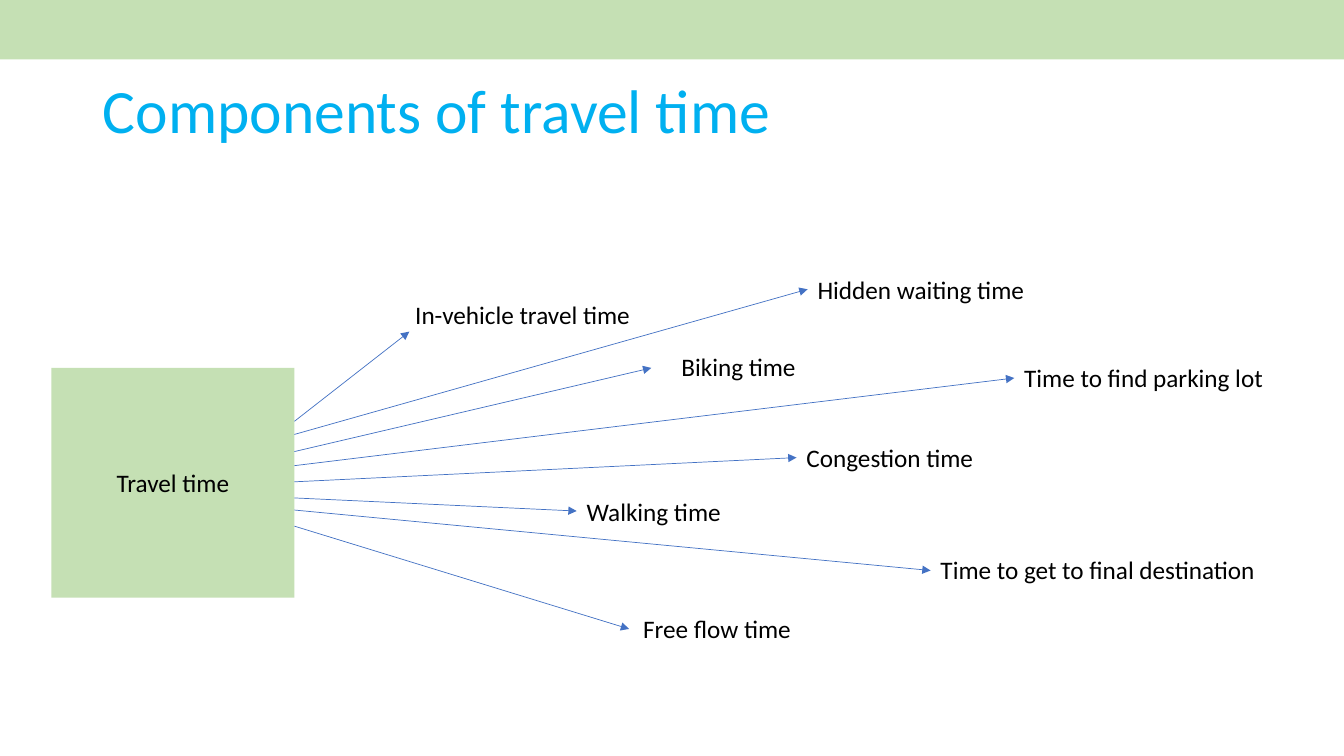
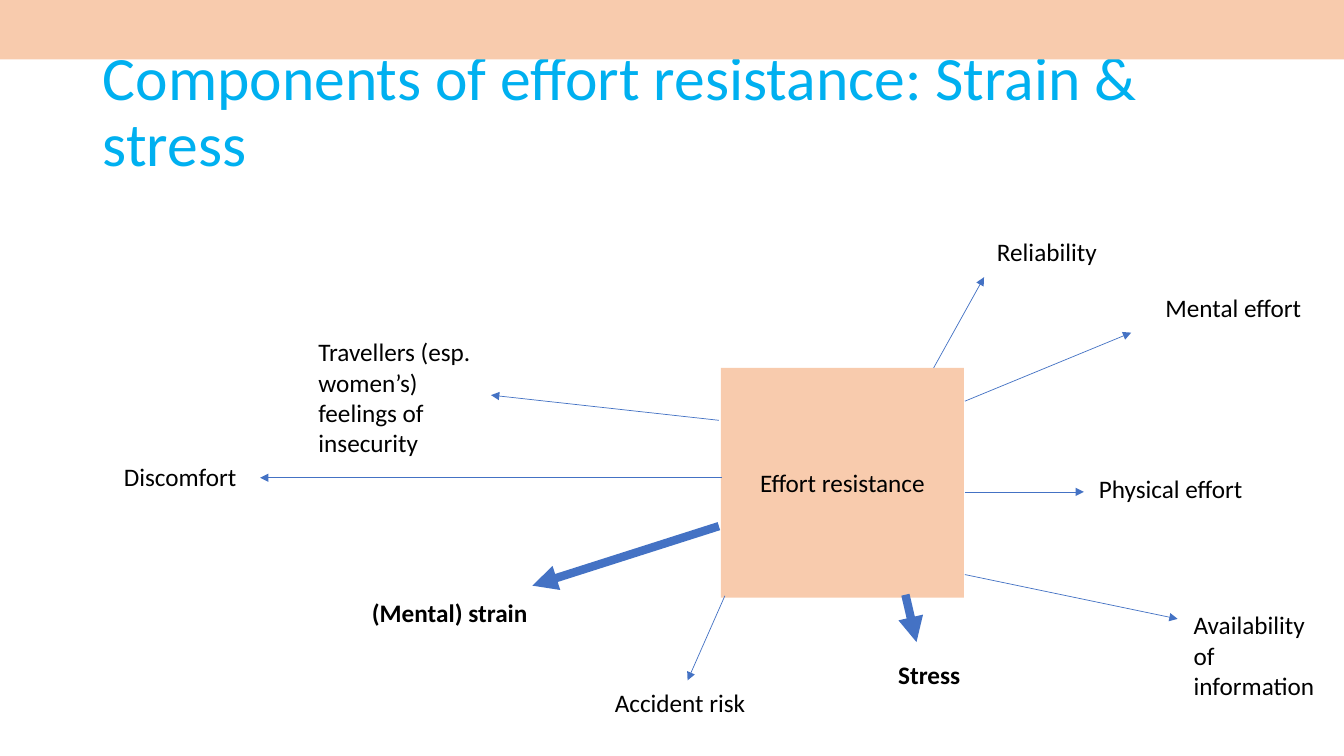
"""Build two hub-and-spoke slides on travel time and effort resistance."""
from typing import NamedTuple

from lxml import etree
from pptx import Presentation
from pptx.dml.color import RGBColor
from pptx.enum.shapes import MSO_CONNECTOR, MSO_SHAPE
from pptx.enum.text import MSO_ANCHOR, MSO_AUTO_SIZE, PP_ALIGN
from pptx.oxml.ns import qn
from pptx.util import Inches, Pt

RECTANGLE = MSO_SHAPE.RECTANGLE
STRAIGHT = MSO_CONNECTOR.STRAIGHT
MIDDLE = MSO_ANCHOR.MIDDLE
LEFT = PP_ALIGN.LEFT
CENTER = PP_ALIGN.CENTER
NO_AUTOFIT = MSO_AUTO_SIZE.NONE
FIT_SHAPE = MSO_AUTO_SIZE.SHAPE_TO_FIT_TEXT

FONT = "Calibri"
TITLE_BLUE = RGBColor(0x00, 0xB0, 0xF0)
ARROW_BLUE = RGBColor(0x44, 0x72, 0xC4)
GREEN = RGBColor(0xC5, 0xE0, 0xB4)
PEACH = RGBColor(0xF8, 0xCB, 0xAD)
BLACK = RGBColor(0x00, 0x00, 0x00)

TITLE_ONLY = 5
TITLE_BOX = (0.92, 0.4, 11.5, 1.45)
BAND_BOX = (-0.02, -0.01, 13.35, 0.6)
HUB_TOP, HUB_WIDTH, HUB_HEIGHT = 3.65, 2.41, 2.28
TIME_LEFT, EFFORT_LEFT = 0.51, 7.15
TIME_EDGE = TIME_LEFT + HUB_WIDTH
EFFORT_EDGE = 9.57
LINE_HEIGHT = 0.4


class Spoke(NamedTuple):
    """A label and the arrow that leads to it from the hub."""
    text: str
    left: float
    top: float
    width: float
    start: tuple
    end: tuple
    height: float = LINE_HEIGHT
    wrap: bool = True
    bold: bool = False


def time_spoke(text, left, top, width, start_top, end):
    """Return a one-line spoke that leaves the right edge of the time hub."""
    return Spoke(text, left, top, width, (TIME_EDGE, start_top), end, wrap=False)


TIME_SPOKES = [
    time_spoke("In-vehicle travel time", 4.02, 2.92, 2.36, 4.18, (4.06, 3.29)),
    time_spoke("Hidden waiting time", 8.01, 2.67, 2.28, 4.31, (8.01, 2.87)),
    time_spoke("Biking time", 6.66, 3.44, 1.35, 4.48, (6.46, 3.65)),
    time_spoke("Time to find parking lot", 10.06, 3.55, 2.6, 4.62, (10.06, 3.75)),
    time_spoke("Congestion time", 7.9, 4.34, 1.88, 4.78, (7.9, 4.54)),
    time_spoke("Walking time", 5.72, 4.87, 1.55, 4.94, (5.72, 5.07)),
    time_spoke("Time to get to final destination", 9.23, 5.45, 3.36, 5.06, (9.23, 5.66)),
    time_spoke("Free flow time", 6.28, 6.04, 1.69, 5.22, (6.24, 6.24)),
]

EFFORT_SPOKES = [
    Spoke("Reliability", 9.79, 2.3, 1.2, (9.26, 3.65), (9.76, 2.75), wrap=False),
    Spoke("Mental effort", 11.46, 2.85, 1.87, (EFFORT_EDGE, 3.98), (11.22, 3.3)),
    Spoke("Physical effort", 10.8, 4.65, 1.87, (EFFORT_EDGE, 4.88), (10.75, 4.88)),
    Spoke("Availability of information", 11.74, 6, 1.53,
          (EFFORT_EDGE, 5.7), (11.68, 6.14), height=1.01),
    Spoke("Stress", 8.81, 6.49, 1.03, (8.98, 5.9), (9.09, 6.37), bold=True),
    Spoke("Accident risk", 6, 6.77, 2.13, (7.19, 5.91), (6.82, 6.75)),
    Spoke("(Mental) strain", 3.59, 5.88, 2.09, (7.13, 5.22), (5.28, 5.81), bold=True),
    Spoke("Discomfort", 1.13, 4.53, 1.42, (7.16, 4.74), (2.58, 4.74)),
    Spoke("Travellers (esp. women’s) feelings of insecurity", 3.06, 3.29, 1.98,
          (7.13, 4.17), (4.87, 3.92), height=1.31),
]


def inches(values):
    """Convert a sequence of numbers to lengths."""
    return [Inches(value) for value in values]


def write(paragraph, text, size=18, color=BLACK, bold=False):
    """Add one formatted run to a paragraph."""
    run = paragraph.add_run()
    run.text = text
    run.font.name = FONT
    run.font.size = Pt(size)
    run.font.color.rgb = color
    run.font.bold = bold


def add_title(slide, text):
    """Place and fill the title placeholder."""
    title = slide.shapes.title
    title.left, title.top, title.width, title.height = inches(TITLE_BOX)
    frame = title.text_frame
    frame.word_wrap = True
    frame.auto_size = NO_AUTOFIT
    frame.vertical_anchor = MIDDLE
    paragraph = frame.paragraphs[0]
    paragraph.alignment = LEFT
    paragraph.line_spacing = 0.9
    write(paragraph, text, 44, TITLE_BLUE)


def add_block(slide, box, color):
    """Add a plain filled rectangle."""
    block = slide.shapes.add_shape(RECTANGLE, *inches(box))
    block.shadow.inherit = False
    block.fill.solid()
    block.fill.fore_color.rgb = color
    block.line.fill.background()
    return block


def add_hub(slide, left, text, color):
    """Add the block that the arrows leave from."""
    hub = add_block(slide, (left, HUB_TOP, HUB_WIDTH, HUB_HEIGHT), color)
    frame = hub.text_frame
    frame.word_wrap = True
    frame.vertical_anchor = MIDDLE
    paragraph = frame.paragraphs[0]
    paragraph.alignment = CENTER
    write(paragraph, text)


def add_arrow(slide, start, end, weight):
    """Add a straight arrow with a triangular head at its end."""
    arrow = slide.shapes.add_connector(STRAIGHT, *inches(start + end))
    arrow.line.color.rgb = ARROW_BLUE
    arrow.line.width = Pt(weight)
    properties = arrow._element.spPr
    outline = properties.find(qn("a:ln"))
    etree.SubElement(outline, qn("a:tailEnd"), type="triangle")
    etree.SubElement(properties, qn("a:effectLst"))


def add_spoke(slide, spoke):
    """Add an arrow and its label, with a heavy arrow for a bold label."""
    add_arrow(slide, spoke.start, spoke.end, 6 if spoke.bold else 0.5)
    box = (spoke.left, spoke.top, spoke.width, spoke.height)
    frame = slide.shapes.add_textbox(*inches(box)).text_frame
    frame.word_wrap = spoke.wrap
    frame.auto_size = FIT_SHAPE
    write(frame.paragraphs[0], spoke.text, bold=spoke.bold)


def add_diagram_slide(presentation, title, hub_text, hub_left, color, spokes):
    """Add a slide with a title, a hub, its spokes and the top band."""
    slide = presentation.slides.add_slide(presentation.slide_layouts[TITLE_ONLY])
    add_title(slide, title)
    add_hub(slide, hub_left, hub_text, color)
    for spoke in spokes:
        add_spoke(slide, spoke)
    add_block(slide, BAND_BOX, color)


def main():
    """Build and save the presentation."""
    presentation = Presentation()
    presentation.slide_width = Inches(13.33)
    presentation.slide_height = Inches(7.5)
    add_diagram_slide(presentation, "Components of travel time",
                      "Travel time", TIME_LEFT, GREEN, TIME_SPOKES)
    add_diagram_slide(presentation, "Components of effort resistance: Strain & stress",
                      "Effort resistance", EFFORT_LEFT, PEACH, EFFORT_SPOKES)
    presentation.save("out.pptx")


if __name__ == "__main__":
    main()
